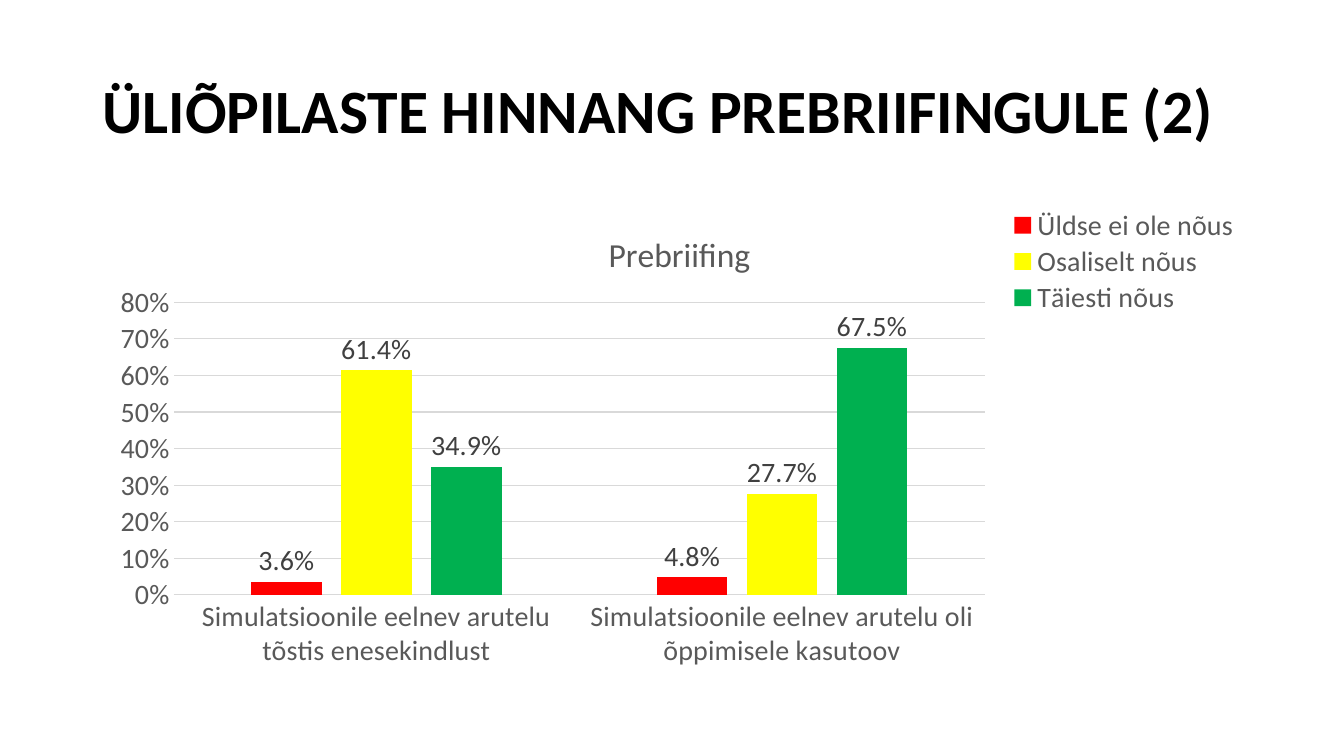
from dataclasses import dataclass

from lxml.etree import SubElement
from pptx import Presentation
from pptx.chart.data import CategoryChartData as Data
from pptx.dml.color import RGBColor as Rgb
from pptx.enum.chart import XL_CHART_TYPE as Kind
from pptx.enum.chart import XL_LABEL_POSITION as Spot
from pptx.enum.chart import XL_LEGEND_POSITION as Side
from pptx.enum.chart import XL_TICK_MARK as Tick
from pptx.enum.text import MSO_ANCHOR as Anchor
from pptx.enum.text import PP_ALIGN as Align
from pptx.oxml.ns import qn
from pptx.util import Cm, Pt


@dataclass(frozen=True)
class Theme:
    face: str = "Calibri"
    ink: str = "000000"
    text: str = "595959"
    label: str = "404040"
    grid: str = "D9D9D9"
    head: int = 44
    title: int = 24
    body: int = 20
    line: float = 0.75


@dataclass(frozen=True)
class Answer:
    name: str
    color: str
    vals: tuple[float, ...]


THEME = Theme()
LEFT, WIDTH = Cm(2.33), Cm(29.21)
TOPICS = (
    "Simulatsioonile eelnev arutelu tõstis enesekindlust",
    "Simulatsioonile eelnev arutelu oli õppimisele kasutoov",
)
ANSWERS = (
    Answer("Üldse ei ole nõus", "FF0000", (0.036, 0.048)),
    Answer("Osaliselt nõus", "FFFF00", (0.614, 0.277)),
    Answer("Täiesti nõus", "00B050", (0.349, 0.675)),
)


def style(font, size: int, color: str, bold: bool = False) -> None:
    font.name, font.size, font.bold = THEME.face, Pt(size), bold
    font.color.rgb = Rgb.from_string(color)


def rule(line) -> None:
    line.color.rgb = Rgb.from_string(THEME.grid)
    line.width = Pt(THEME.line)


def place(node, inner: bool = False, **box: float) -> None:
    """Set a chart part's position as fractions of the chart."""
    for old in node.findall(qn("c:layout")):
        node.remove(old)
    layout = SubElement(node, qn("c:layout"))
    manual = SubElement(layout, qn("c:manualLayout"))
    if inner:
        SubElement(manual, qn("c:layoutTarget")).set("val", "inner")
    for key in ("xMode", "yMode"):
        SubElement(manual, qn(f"c:{key}")).set("val", "edge")
    for key, val in box.items():
        SubElement(manual, qn(f"c:{key}")).set("val", str(val))
    over = node.find(qn("c:overlay"))
    node.insert(0 if over is None else node.index(over), layout)


def add_head(slide) -> None:
    head = slide.shapes.title
    head.left, head.top, head.width, head.height = LEFT, Cm(1.01), WIDTH, Cm(3.68)
    frame = head.text_frame
    frame.text = "ÜLIÕPILASTE HINNANG PREBRIIFINGULE (2)"
    frame.word_wrap = True
    frame.vertical_anchor = Anchor.MIDDLE
    para = frame.paragraphs[0]
    para.alignment, para.line_spacing = Align.LEFT, 0.9
    style(para.runs[0].font, THEME.head, THEME.ink, True)


def add_bars(slide) -> None:
    data = Data(number_format="0.0%")
    data.categories = TOPICS
    for ans in ANSWERS:
        data.add_series(ans.name, ans.vals)
    chart = slide.shapes.add_chart(
        Kind.COLUMN_CLUSTERED, LEFT, Cm(5.08), WIDTH, Cm(12.09), data
    ).chart
    style(chart.font, THEME.body, THEME.ink)

    # Chart title
    chart.has_title = True
    frame = chart.chart_title.text_frame
    frame.text = "Prebriifing"
    style(frame.paragraphs[0].runs[0].font, THEME.title, THEME.text)

    # Legend
    chart.has_legend = True
    legend = chart.legend
    legend.position, legend.include_in_layout = Side.RIGHT, False
    style(legend.font, THEME.body, THEME.text)

    # Axes
    for axis in (chart.category_axis, chart.value_axis):
        axis.major_tick_mark = axis.minor_tick_mark = Tick.NONE
        style(axis.tick_labels.font, THEME.body, THEME.text)
    rule(chart.category_axis.format.line)
    scale = chart.value_axis
    scale.minimum_scale, scale.maximum_scale, scale.major_unit = 0, 0.8, 0.1
    scale.format.line.fill.background()
    rule(scale.major_gridlines.format.line)
    scale.tick_labels.number_format = "0%"
    scale.tick_labels.number_format_is_linked = False

    # Columns and their labels
    plot = chart.plots[0]
    plot.vary_by_categories = False
    plot.gap_width, plot.overlap = 219, -27
    for ans, bar in zip(ANSWERS, plot.series):
        bar.invert_if_negative = False
        bar.format.fill.solid()
        bar.format.fill.fore_color.rgb = Rgb.from_string(ans.color)
        tags = bar.data_labels
        tags.show_value, tags.position = True, Spot.OUTSIDE_END
        tags.number_format, tags.number_format_is_linked = "0.0%", False
        style(tags.font, THEME.body, THEME.label)

    # Positions inside the chart
    root = chart.element if hasattr(chart, "element") else chart._chartSpace
    area = root.find(".//" + qn("c:plotArea"))
    place(area, True, x=0.07, y=0.21, w=0.7, h=0.61)
    place(root.find(".//" + qn("c:legend")), x=0.79, y=0.01, w=0.2, h=0.23)
    place(root.find(".//" + qn("c:title")), x=0.44, y=0.05)


def main() -> None:
    deck = Presentation()
    deck.slide_width, deck.slide_height = Cm(33.87), Cm(19.05)
    slide = deck.slides.add_slide(deck.slide_layouts[5])
    add_head(slide)
    add_bars(slide)
    deck.save("out.pptx")


if __name__ == "__main__":
    main()
